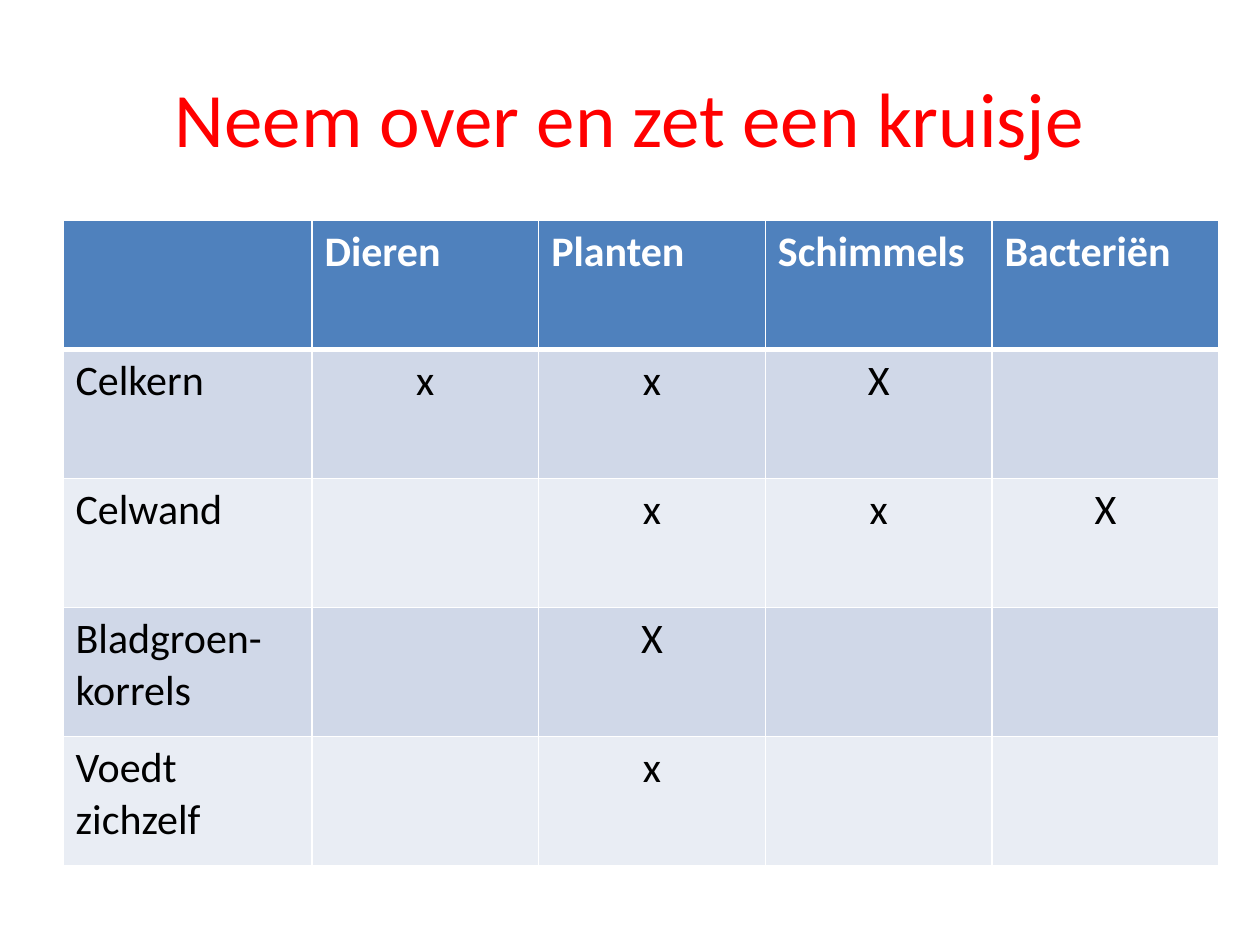
from typing import NamedTuple

from lxml import etree
from pptx import Presentation
from pptx.dml.color import RGBColor
from pptx.enum.text import MSO_ANCHOR, PP_ALIGN
from pptx.oxml.ns import qn
from pptx.util import Cm, Pt

LEFT, CENTER = PP_ALIGN.LEFT, PP_ALIGN.CENTER
MIDDLE = MSO_ANCHOR.MIDDLE
FONT = "Calibri"
COLORS = {
    "title": "FF0000",
    "header": "4F81BD",
    "band_dark": "D0D8E8",
    "band_light": "E9EDF4",
    "white": "FFFFFF",
    "text": "000000",
}


class TextStyle(NamedTuple):
    size: int
    color: str
    bold: bool = False
    align: PP_ALIGN = LEFT


class Trait(NamedTuple):
    name: str
    marks: tuple[str, ...]


TITLE = TextStyle(44, "title", align=CENTER)
HEADING = TextStyle(24, "white", bold=True)
LABEL = TextStyle(24, "text")
MARK = TextStyle(24, "text", align=CENTER)

HEADINGS = ("", "Dieren", "Planten", "Schimmels", "Bacteriën")
TRAITS = (
    Trait("Celkern", ("x", "x", "X", "")),
    Trait("Celwand", ("", "x", "x", "X")),
    Trait("Bladgroen-korrels", ("", "X", "", "")),
    Trait("Voedt zichzelf", ("", "x", "", "")),
)
LABEL_WIDTH, MARK_WIDTH, ROW_HEIGHT = Cm(5.02), Cm(4.57), Cm(2.6)


def write(frame, text: str, style: TextStyle) -> None:
    para = frame.paragraphs[0]
    para.alignment = style.align
    para.font.size = Pt(style.size)
    if not text:
        return
    span = para.add_run()
    span.text = text
    span.font.name = FONT
    span.font.size = Pt(style.size)
    span.font.bold = style.bold
    span.font.color.rgb = RGBColor.from_string(COLORS[style.color])


def add_border(cell, side: str, width: float) -> None:
    properties = cell._tc.get_or_add_tcPr()
    line = etree.SubElement(properties, qn(f"a:ln{side}"), w=str(Pt(width)))
    fill = etree.SubElement(line, qn("a:solidFill"))
    etree.SubElement(fill, qn("a:srgbClr"), val=COLORS["white"])


def fill_row(table, row: int, texts: tuple[str, ...], color: str,
             styles: tuple[TextStyle, TextStyle]) -> None:
    # The line below the header is thicker than the others
    widths = {"L": 1, "R": 1, "T": 3 if row == 1 else 1, "B": 3 if row == 0 else 1}
    for column, text in enumerate(texts):
        cell = table.cell(row, column)
        for side, width in widths.items():
            add_border(cell, side, width)
        cell.fill.solid()
        cell.fill.fore_color.rgb = RGBColor.from_string(COLORS[color])
        write(cell.text_frame, text, styles[min(column, 1)])


def main() -> None:
    deck = Presentation()
    deck.slide_width, deck.slide_height = Cm(25.4), Cm(19.05)
    page = deck.slides.add_slide(deck.slide_layouts[6])

    # Title
    box = page.shapes.add_textbox(Cm(1.27), Cm(0.76), Cm(22.86), Cm(3.18))
    box.text_frame.word_wrap = True
    box.text_frame.vertical_anchor = MIDDLE
    write(box.text_frame, "Neem over en zet een kruisje", TITLE)

    # Table of cell traits
    row_count, column_count = len(TRAITS) + 1, len(HEADINGS)
    table = page.shapes.add_table(
        row_count, column_count, Cm(1.27), Cm(4.45),
        LABEL_WIDTH + MARK_WIDTH * (column_count - 1), ROW_HEIGHT * row_count,
    ).table
    for index, column in enumerate(table.columns):
        column.width = MARK_WIDTH if index else LABEL_WIDTH
    for row in table.rows:
        row.height = ROW_HEIGHT

    fill_row(table, 0, HEADINGS, "header", (HEADING, HEADING))
    for index, trait in enumerate(TRAITS, start=1):
        band = "band_dark" if index % 2 else "band_light"
        fill_row(table, index, (trait.name, *trait.marks), band, (LABEL, MARK))

    deck.save("out.pptx")


if __name__ == "__main__":
    main()
